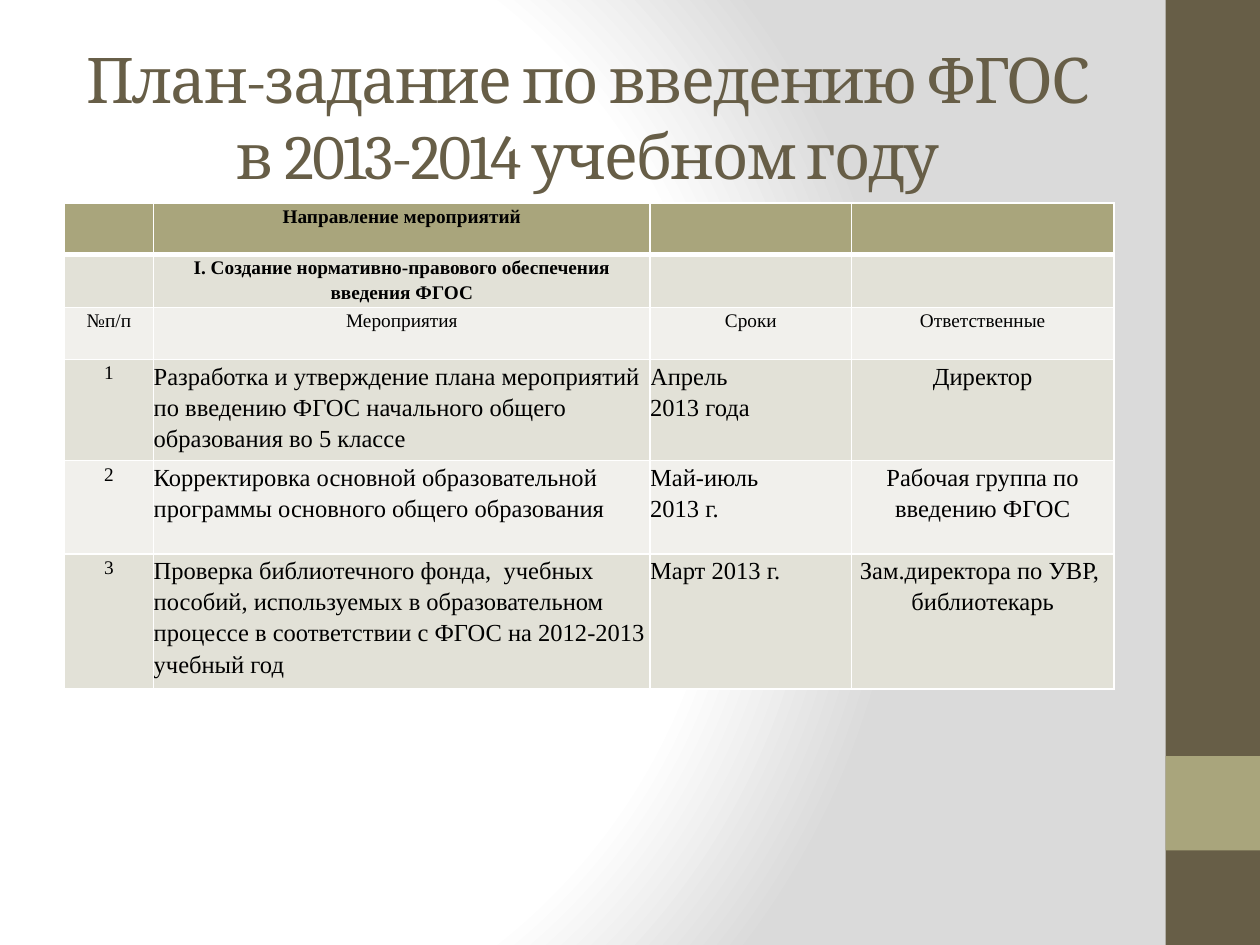
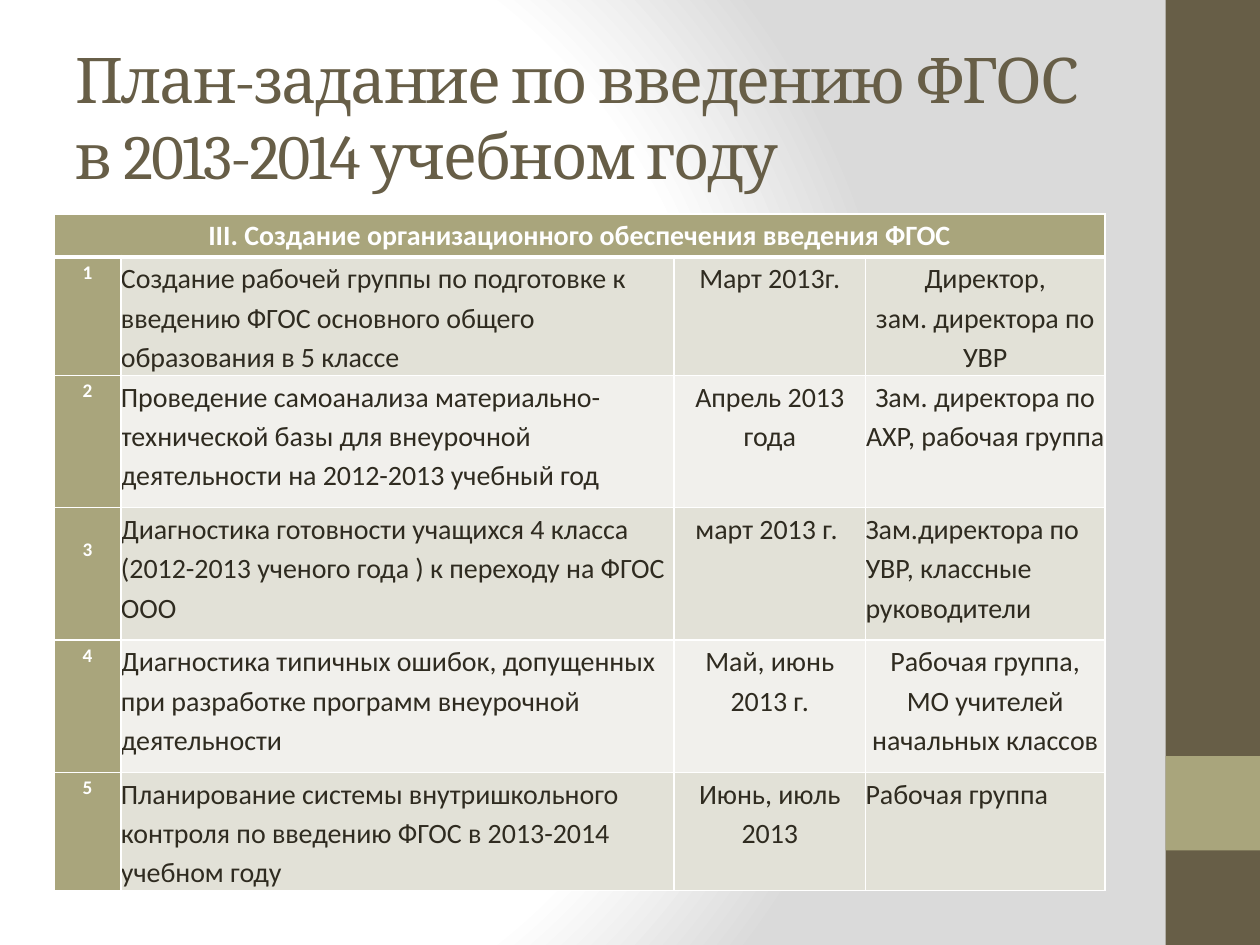
from pptx import Presentation
from pptx.dml.color import RGBColor
from pptx.enum.shapes import MSO_SHAPE as Shape
from pptx.enum.text import MSO_ANCHOR as Anchor, PP_ALIGN as Align
from pptx.oxml import parse_xml
from pptx.util import Inches, Pt

# The slide is a grid of 100 columns and 75 rows of square units
COLUMNS, ROWS = 100, 75
UNIT = Inches(0.1)

BROWN, OLIVE, WHITE, BLACK, INK = "675E47", "A9A57C", "FFFFFF", "000000", "2F2B20"
STRIPES = ["F1F0EC", "E2E1D7"]
NAMESPACE = 'xmlns:a="http://schemas.openxmlformats.org/drawingml/2006/main"'
BACKGROUND = f"""
<p:bg xmlns:p="http://schemas.openxmlformats.org/presentationml/2006/main" {NAMESPACE}>
  <p:bgPr>
    <a:gradFill rotWithShape="1">
      <a:gsLst>
        <a:gs pos="0"><a:srgbClr val="FFFFFF"/></a:gs>
        <a:gs pos="75000"><a:srgbClr val="FFFFFF"/></a:gs>
        <a:gs pos="100000"><a:srgbClr val="DADADA"/></a:gs>
      </a:gsLst>
      <a:path path="circle">
        <a:fillToRect l="20000" t="50000" r="100000" b="50000"/>
      </a:path>
    </a:gradFill>
    <a:effectLst/>
  </p:bgPr>
</p:bg>"""
TITLE = "План-задание по введению ФГОС в 2013-2014 учебном году"
BANDS = [(0, ROWS, BROWN), (60, 7.5, OLIVE)]

# "left" names the columns or single cells that are not centred
PLANS = [
    dict(
        title_align=Align.CENTER, at=(5.1, 16.1), font="Times New Roman",
        size=14, color=BLACK, head_color=BLACK, head_rows=3, bold_rows=2,
        head_size=11, merged=False, olive_numbers=False,
        widths=[7.1, 39.4, 16, 20.8], heights=[4.1, 4.1, 4.1, 7.4, 7.4, 9.9],
        left=[(row, column) for row in (3, 4, 5) for column in (1, 2)],
        rows=[
            ["", "Направление мероприятий", "", ""],
            ["", "I. Создание нормативно-правового обеспечения введения ФГОС", "", ""],
            ["№п/п", "Мероприятия", "Сроки", "Ответственные"],
            ["1", "Разработка и утверждение плана мероприятий по введению ФГОС "
             "начального общего образования во 5 классе",
             "Апрель\n2013 года", "Директор"],
            ["2", "Корректировка основной образовательной программы основного "
             "общего образования",
             "Май-июль\n2013 г.", "Рабочая группа по введению ФГОС"],
            ["3", "Проверка библиотечного фонда,  учебных пособий, используемых в "
             "образовательном процессе в соответствии с ФГОС на 2012-2013 учебный год",
             "Март 2013 г.", "Зам.директора по УВР, \nбиблиотекарь"],
        ],
    ),
    dict(
        title_align=Align.LEFT, at=(4.3, 17), font="Calibri",
        size=16, color=INK, head_color=WHITE, head_rows=1, bold_rows=1,
        head_size=16, merged=True, olive_numbers=True,
        widths=[5.3, 43.9, 15.2, 19], heights=[3.4, 9.4, 10.5, 10.5, 10.5, 9.4],
        left=[(row, 1) for row in range(1, 6)] + [(3, 3), (5, 3)],
        rows=[
            ["III. Создание организационного обеспечения введения ФГОС", "", "", ""],
            ["1", "Создание рабочей группы по подготовке к введению ФГОС основного "
             "общего образования в 5 классе",
             "Март 2013г.", "Директор,\nзам. директора по УВР"],
            ["2", "Проведение самоанализа материально-технической базы для "
             "внеурочной деятельности на 2012-2013 учебный год",
             "Апрель 2013 года", "Зам. директора по АХР, рабочая группа "],
            ["3", "Диагностика готовности учащихся 4 класса (2012-2013 ученого "
             "года ) к переходу на ФГОС ООО",
             "март 2013 г. ", "Зам.директора по УВР, классные руководители"],
            ["4", "Диагностика типичных ошибок, допущенных при разработке программ "
             "внеурочной деятельности",
             "Май, июнь 2013 г.", "Рабочая группа,\nМО учителей начальных классов"],
            ["5", "Планирование системы внутришкольного контроля по введению ФГОС "
             "в 2013-2014 учебном году",
             "Июнь, июль 2013", "Рабочая группа"],
        ],
    ),
]


def paint(fill, color):
    """Make a shape, cell or font fill solid."""
    fill.solid()
    fill.fore_color.rgb = RGBColor.from_string(color)


def write(frame, text, font, size, color, align, bold=False, line_spacing=1, tracking=0):
    """Put each line of the text in its own paragraph; tracking is in points."""
    for index, line in enumerate(text.split("\n")):
        paragraph = frame.add_paragraph() if index else frame.paragraphs[0]
        paragraph.alignment = align
        paragraph.line_spacing = line_spacing
        run = paragraph.add_run()
        run.text = line
        run.font.name, run.font.size, run.font.bold = font, Pt(size), bold
        paint(run.font.fill, color)
        if tracking:
            run.font._element.set("spc", str(tracking * 100))


presentation = Presentation()
presentation.slide_width = COLUMNS * UNIT
presentation.slide_height = ROWS * UNIT

for plan in PLANS:
    slide = presentation.slides.add_slide(presentation.slide_layouts[6])
    slide._element.cSld.insert(0, parse_xml(BACKGROUND))

    for top, height, color in BANDS:
        band = slide.shapes.add_shape(
            Shape.RECTANGLE, int(92.5 * UNIT), int(top * UNIT),
            int(7.5 * UNIT), int(height * UNIT))
        band.shadow.inherit = False
        band.line.fill.background()
        paint(band.fill, color)

    title = slide.shapes.add_textbox(
        5 * UNIT, 3 * UNIT, int(83.3 * UNIT), int(12.5 * UNIT)).text_frame
    title.word_wrap = True
    title.vertical_anchor = Anchor.MIDDLE
    write(title, TITLE, font="Cambria", size=36, color=BROWN,
          align=plan["title_align"], tracking=-1)

    left, top = plan["at"]
    table = slide.shapes.add_table(
        len(plan["heights"]), len(plan["widths"]), int(left * UNIT), int(top * UNIT),
        int(sum(plan["widths"]) * UNIT), int(sum(plan["heights"]) * UNIT)).table
    table.first_row = table.horz_banding = False
    for column, width in zip(table.columns, plan["widths"]):
        column.width = int(width * UNIT)
    for row, height in zip(table.rows, plan["heights"]):
        row.height = int(height * UNIT)
    if plan["merged"]:
        table.cell(0, 0).merge(table.cell(0, 3))

    for row, texts in enumerate(plan["rows"]):
        for column, text in enumerate(texts):
            cell = table.cell(row, column)
            cell.margin_left = cell.margin_right = cell.margin_top = cell.margin_bottom = 0
            is_head = row < plan["head_rows"]
            is_olive = row == 0 or (column == 0 and plan["olive_numbers"])
            paint(cell.fill, OLIVE if is_olive else STRIPES[row % 2])

            # A thick line parts the first row from the rest
            weights = dict(L=1, R=1, T=3 if row == 1 else 1, B=3 if row == 0 else 1)
            for index, (side, weight) in enumerate(weights.items()):
                cell._tc.get_or_add_tcPr().insert(index, parse_xml(
                    f'<a:ln{side} {NAMESPACE} w="{Pt(weight)}"><a:solidFill>'
                    f'<a:srgbClr val="{WHITE}"/></a:solidFill></a:ln{side}>'))

            if text:
                write(cell.text_frame, text, font=plan["font"],
                      size=plan["head_size"] if is_head else 11 if column == 0 else plan["size"],
                      color=plan["head_color"] if is_head or is_olive else plan["color"],
                      bold=row < plan["bold_rows"] or is_olive,
                      align=Align.LEFT if (row, column) in plan["left"] else Align.CENTER,
                      line_spacing=1.15)

    # The third number of the organisational plan stands one line lower
    if plan["olive_numbers"]:
        table.cell(3, 0).margin_top = int(2.1 * UNIT)

presentation.save("out.pptx")
